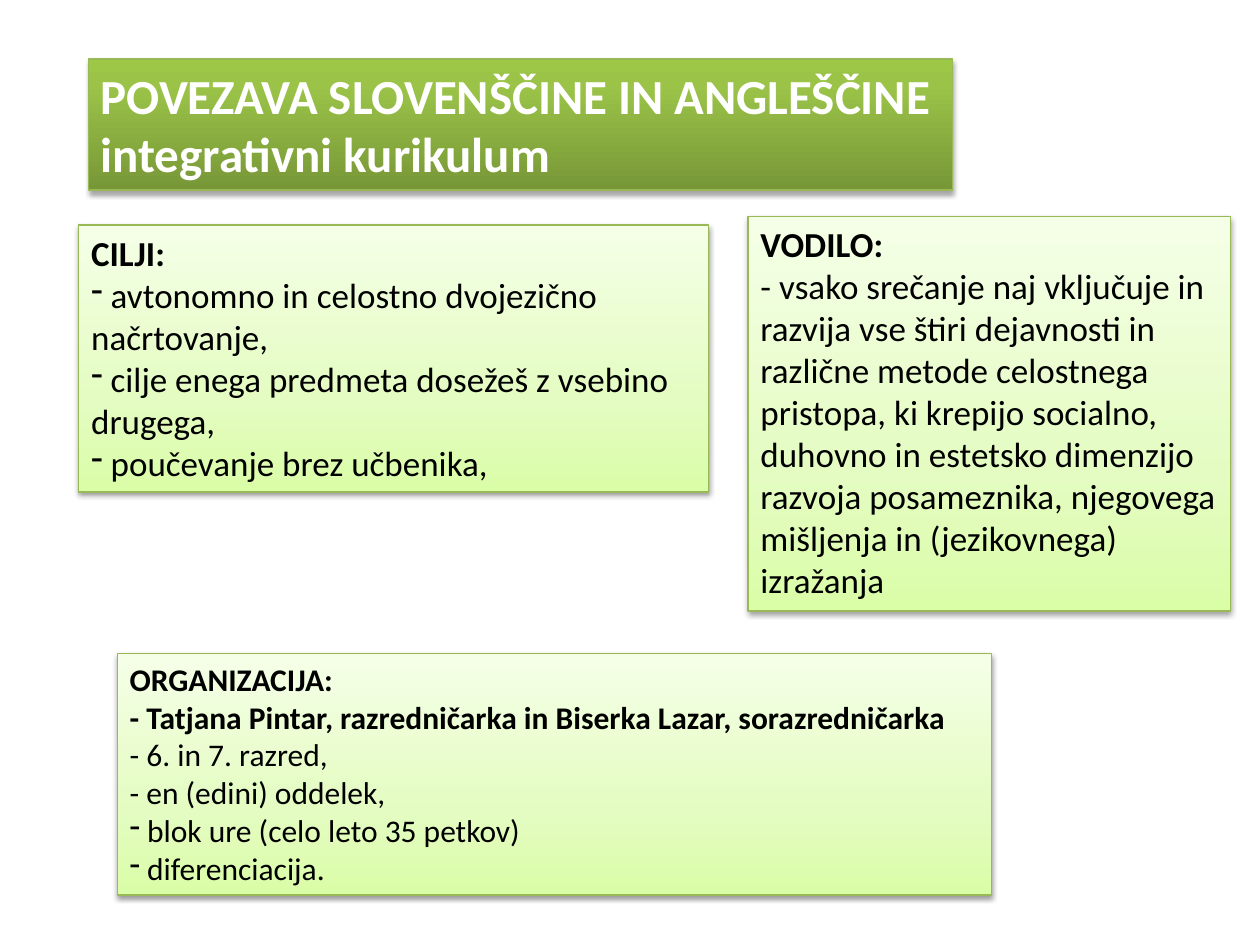
from copy import deepcopy
from dataclasses import dataclass

from lxml.etree import SubElement
from pptx import Presentation
from pptx.dml.color import RGBColor
from pptx.enum.text import MSO_AUTO_SIZE as AutoSize
from pptx.oxml.ns import qn
from pptx.util import Pt


@dataclass(frozen=True)
class Theme:
    font: str = "Calibri"
    title_size: int = 28
    body_size: int = 20
    small_size: int = 18
    light_text: str = "FFFFFF"
    dark_text: str = "000000"
    border: str = "98B955"
    shadow: str = "000000"
    # Gradient stops run from the bottom edge to the top edge.
    title_fill: tuple = ((0, "779737"), (0.8, "9BC348"), (1, "9DC746"))
    panel_fill: tuple = ((0, "DAFDA7"), (0.35, "E4FCC2"), (1, "F5FFE7"))


THEME = Theme()


def fill_upwards(panel, stops):
    fill = panel.fill
    fill.gradient()
    fill.gradient_angle = 90
    stop_list = panel.element.spPr.find(qn("a:gradFill")).find(qn("a:gsLst"))
    stop_list.append(deepcopy(stop_list[-1]))
    for stop, (position, color) in zip(fill.gradient_stops, stops):
        stop.position = position
        stop.color.rgb = RGBColor.from_string(color)


def drop_shadow(panel, distance, opacity):
    panel.shadow.inherit = False
    effects = panel.element.spPr.find(qn("a:effectLst"))
    shadow = SubElement(effects, qn("a:outerShdw"), blurRad=str(Pt(3.1)),
                        dist=str(Pt(distance)), dir=str(90 * 60000), rotWithShape="0")
    color = SubElement(shadow, qn("a:srgbClr"), val=THEME.shadow)
    SubElement(color, qn("a:alpha"), val=str(opacity * 1000))


def add_dash(paragraph):
    """Give the paragraph a hanging-free dash as its bullet."""
    properties = paragraph._p.get_or_add_pPr()
    properties.set("marL", "0")
    properties.set("indent", "0")
    SubElement(properties, qn("a:buFontTx"))
    SubElement(properties, qn("a:buChar"), char="-")


def write_lines(panel, lines, size, color, bold_lines, dashed_from, wrap):
    frame = panel.text_frame
    frame.word_wrap = wrap
    frame.auto_size = AutoSize.SHAPE_TO_FIT_TEXT
    frame.text = "\n".join(lines)
    for index, paragraph in enumerate(frame.paragraphs):
        if dashed_from is not None and index >= dashed_from:
            add_dash(paragraph)
        for run in paragraph.runs:
            run.font.name = THEME.font
            run.font.size = Pt(size)
            run.font.bold = index < bold_lines
            run.font.color.rgb = RGBColor.from_string(color)


def add_panel(slide, box, lines, size=THEME.body_size, color=THEME.dark_text,
              stops=THEME.panel_fill, shadow=(1.6, 38), bold_lines=1,
              dashed_from=None, wrap=True):
    """Add a framed gradient panel; lines from dashed_from on get a dash bullet."""
    panel = slide.shapes.add_textbox(*map(Pt, box))
    fill_upwards(panel, stops)
    panel.line.color.rgb = RGBColor.from_string(THEME.border)
    panel.line.width = Pt(0.75)
    drop_shadow(panel, *shadow)
    write_lines(panel, lines, size, color, bold_lines, dashed_from, wrap)


def add_title(slide, box):
    add_panel(slide, box, [
        "POVEZAVA SLOVENŠČINE IN ANGLEŠČINE",
        "integrativni kurikulum",
    ], size=THEME.title_size, color=THEME.light_text, stops=THEME.title_fill,
        shadow=(1.8, 35), bold_lines=2, wrap=False)


def add_goals(slide, box):
    add_panel(slide, box, [
        "CILJI:",
        " avtonomno in celostno dvojezično načrtovanje,",
        " cilje enega predmeta dosežeš z vsebino drugega,",
        " poučevanje brez učbenika,",
    ], dashed_from=1)


def add_guideline(slide, box):
    add_panel(slide, box, [
        "VODILO:",
        "- vsako srečanje naj vključuje in razvija vse štiri dejavnosti in "
        "različne metode celostnega pristopa, ki krepijo socialno, duhovno in "
        "estetsko dimenzijo razvoja posameznika, njegovega mišljenja in "
        "(jezikovnega) izražanja",
    ])


def add_organisation(slide, box):
    add_panel(slide, box, [
        "ORGANIZACIJA:",
        "- Tatjana Pintar, razredničarka in Biserka Lazar, sorazredničarka",
        "- 6. in 7. razred,",
        "- en (edini) oddelek,",
        " blok ure (celo leto 35 petkov)",
        " diferenciacija.",
    ], size=THEME.small_size, bold_lines=2, dashed_from=4, wrap=False)


def main():
    deck = Presentation()
    deck.slide_width, deck.slide_height = Pt(720), Pt(540)
    slide = deck.slides.add_slide(deck.slide_layouts[6])
    add_organisation(slide, (67, 373.5, 499.5, 138))
    add_goals(slide, (45, 128.6, 360, 152.6))
    add_guideline(slide, (427.5, 123.8, 275.8, 225.4))
    add_title(slide, (50.5, 33.7, 494, 75))
    deck.save("out.pptx")


if __name__ == "__main__":
    main()
